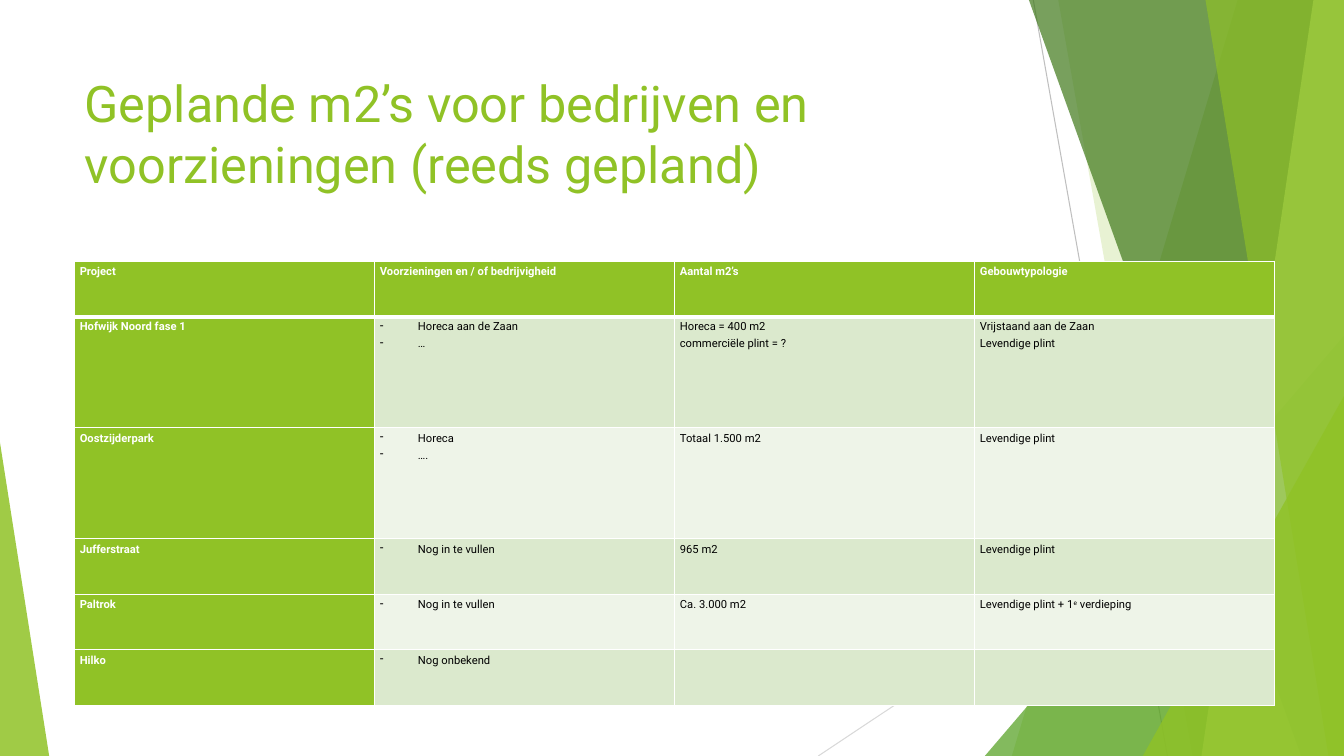
from dataclasses import dataclass

from lxml.etree import SubElement
from pptx import Presentation
from pptx.dml.color import RGBColor
from pptx.enum.shapes import MSO_CONNECTOR, MSO_SHAPE
from pptx.enum.text import MSO_ANCHOR, MSO_AUTO_SIZE, PP_ALIGN
from pptx.oxml.ns import qn
from pptx.util import Cm, Pt


@dataclass(frozen=True)
class Theme:
    font: str = "Roboto"
    title_size: float = 36
    table_size: float = 8
    green: str = "90C226"
    leaf: str = "54A021"
    forest: str = "3F7819"
    lime: str = "C0E474"
    band_dark: str = "DBE9CD"
    band_light: str = "EEF4E8"
    white: str = "FFFFFF"
    black: str = "000000"
    line_dark: str = "BFBFBF"
    line_light: str = "D9D9D9"


@dataclass(frozen=True)
class Box:
    left: float
    top: float
    width: float
    height: float


THEME = Theme()
PAGE = Box(0, 0, 33.87, 19.05)
TITLE_BOX = Box(1.88, 1.7, 23.88, 3.66)
TABLE_BOX = Box(1.88, 6.58, 30.25, 11.2)

HEADER = ["Project", "Voorzieningen en / of bedrijvigheid", "Aantal m2’s", "Gebouwtypologie"]
PROJECTS = [
    ["Hofwijk Noord fase 1", "Horeca aan de Zaan\n…",
     "Horeca = 400 m2\ncommerciële plint = ?", "Vrijstaand aan de Zaan\nLevendige plint"],
    ["Oostzijderpark", "Horeca\n….", "Totaal 1.500 m2", "Levendige plint"],
    ["Jufferstraat", "Nog in te vullen", "965 m2", "Levendige plint"],
    ["Paltrok", "Nog in te vullen", "Ca. 3.000 m2", "Levendige plint + 1^e^ verdieping"],
    ["Hilko", "Nog onbekend", "", ""],
]
ROW_UNITS = [1, 2, 2, 1, 1, 1]


def apply_format(target, values):
    for name, value in values.items():
        setattr(target, name, value)


def format_font(font, size, color, bold=False):
    apply_format(font, {"name": THEME.font, "size": Pt(size), "bold": bold})
    font.color.rgb = RGBColor.from_string(color)


def paint(shape, color, opacity):
    shape.shadow.inherit = False
    shape.line.fill.background()
    shape.fill.solid()
    shape.fill.fore_color.rgb = RGBColor.from_string(color)
    color_element = shape.fill._xPr.find(qn("a:solidFill"))[0]
    SubElement(color_element, qn("a:alpha"), val=str(opacity * 1000))


def add_thin_line(slide, box, start, end, color):
    x1, y1, x2, y2 = (Cm(value) for value in (
        box.left + start[0], box.top + start[1], box.left + end[0], box.top + end[1]))
    connector = slide.shapes.add_connector(MSO_CONNECTOR.STRAIGHT, x1, y1, x2, y2)
    connector.line.width = Pt(0.75)
    connector.line.color.rgb = RGBColor.from_string(color)
    SubElement(connector._element.spPr, qn("a:effectLst"))


def add_band(slide, box, top_x, bottom_x, color, opacity):
    right, bottom = box.left + box.width, box.top + box.height
    corners = [(box.left + top_x, box.top), (right, box.top),
               (right, bottom), (box.left + bottom_x, bottom)]
    points = [(Cm(x), Cm(y)) for x, y in corners]
    builder = slide.shapes.build_freeform(*points[0])
    builder.add_line_segments(points[1:], close=True)
    paint(builder.convert_to_shape(), color, opacity)


def add_corner_triangle(slide, box, width, height, on_right, color, opacity):
    left = box.left + (box.width - width if on_right else 0)
    top = box.top + box.height - height
    shape = slide.shapes.add_shape(
        MSO_SHAPE.ISOSCELES_TRIANGLE, Cm(left), Cm(top), Cm(width), Cm(height))
    shape.adjustments[0] = 1 if on_right else 0
    paint(shape, color, opacity)


def add_backdrop(slide, box):
    add_thin_line(slide, box, (26.04, 0), (29.42, box.height), THEME.line_dark)
    add_thin_line(slide, box, (box.width, 10.23), (20.62, box.height), THEME.line_light)
    add_band(slide, box, 31.19, 25.5, THEME.green, 30)
    add_band(slide, box, 26.67, 30.05, THEME.green, 20)
    add_corner_triangle(slide, box, 9.05, 10.59, True, THEME.leaf, 72)
    add_band(slide, box, 25.93, 32.79, THEME.forest, 70)
    add_band(slide, box, 33.1, 30.28, THEME.lime, 70)
    add_band(slide, box, 30.38, 33.48, THEME.green, 65)
    add_corner_triangle(slide, box, 5.07, 9.07, True, THEME.green, 80)
    add_corner_triangle(slide, box, 1.24, 7.9, False, THEME.green, 85)


def add_title(slide, box, text):
    title = slide.shapes.title
    apply_format(title, {"left": Cm(box.left), "top": Cm(box.top),
                         "width": Cm(box.width), "height": Cm(box.height)})
    apply_format(title.text_frame, {"text": text, "word_wrap": True,
                                    "auto_size": MSO_AUTO_SIZE.NONE,
                                    "vertical_anchor": MSO_ANCHOR.TOP})
    paragraph = title.text_frame.paragraphs[0]
    paragraph.alignment = PP_ALIGN.LEFT
    format_font(paragraph.runs[0].font, THEME.title_size, THEME.green)


def add_borders(cell, is_header):
    properties = cell._tc.get_or_add_tcPr()
    for side in ("lnL", "lnR", "lnT", "lnB"):
        width = Pt(3 if is_header and side == "lnB" else 1)
        line = SubElement(properties, qn(f"a:{side}"), w=str(width))
        fill = SubElement(line, qn("a:solidFill"))
        SubElement(fill, qn("a:srgbClr"), val=THEME.white)


def add_bullet(paragraph):
    properties = paragraph._p.get_or_add_pPr()
    indent = Cm(0.96)
    properties.set("marL", str(indent))
    properties.set("indent", str(-indent))
    SubElement(properties, qn("a:buChar"), char="-")


def fill_cell(cell, text, row, column):
    emphasized = row == 0 or column == 0
    apply_format(cell, {"margin_left": Cm(0.13), "margin_right": Cm(0.13),
                        "margin_top": 0, "margin_bottom": 0})
    add_borders(cell, row == 0)
    band = THEME.band_dark if row % 2 else THEME.band_light
    cell.fill.solid()
    cell.fill.fore_color.rgb = RGBColor.from_string(THEME.green if emphasized else band)
    cell.text = text.replace("^", "")
    for paragraph, line in zip(cell.text_frame.paragraphs, text.split("\n")):
        paragraph.line_spacing = 1.3
        if column == 1 and row > 0:
            add_bullet(paragraph)
        paragraph.clear()
        for position, part in enumerate(line.split("^")):
            run = paragraph.add_run()
            run.text = part
            format_font(run.font, THEME.table_size,
                        THEME.white if emphasized else THEME.black, emphasized)
            if position % 2:
                run._r.get_or_add_rPr().set("baseline", "30000")


def add_project_table(slide, box, rows):
    frame = slide.shapes.add_table(len(rows), len(HEADER), Cm(box.left), Cm(box.top),
                                   Cm(box.width), Cm(box.height))
    table = frame.table
    table.first_col = True
    for column in table.columns:
        column.width = Cm(box.width / len(HEADER))
    for row, units in zip(table.rows, ROW_UNITS):
        row.height = Cm(box.height * units / sum(ROW_UNITS))
    for row, texts in enumerate(rows):
        for column, text in enumerate(texts):
            fill_cell(table.cell(row, column), text, row, column)


def main():
    presentation = Presentation()
    apply_format(presentation, {"slide_width": Cm(PAGE.width), "slide_height": Cm(PAGE.height)})
    slide = presentation.slides.add_slide(presentation.slide_layouts.get_by_name("Title Only"))
    add_backdrop(slide, PAGE)
    add_title(slide, TITLE_BOX, "Geplande m2’s voor bedrijven en voorzieningen (reeds gepland)")
    add_project_table(slide, TABLE_BOX, [HEADER, *PROJECTS])
    presentation.save("out.pptx")


if __name__ == "__main__":
    main()
